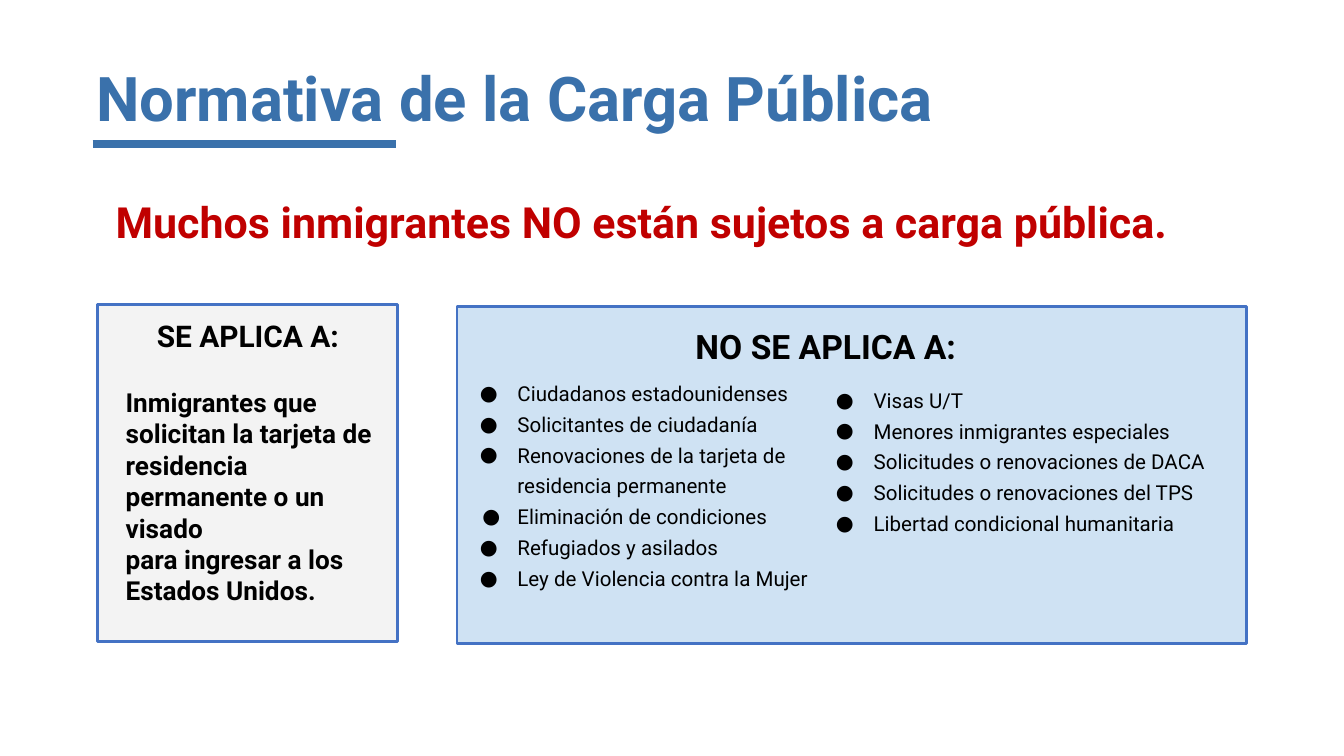
from lxml.etree import SubElement
from pptx import Presentation
from pptx.dml.color import RGBColor
from pptx.enum.shapes import MSO_CONNECTOR as Connector, MSO_SHAPE as Shape
from pptx.enum.text import MSO_ANCHOR as Anchor, PP_ALIGN as Align
from pptx.oxml.ns import qn
from pptx.util import Inches, Pt

WIDTH = Inches(10)
HEIGHT = WIDTH * 9 // 16
COLUMN, ROW = WIDTH / 100, HEIGHT / 56.25
FONT = "Roboto"

BLUE = RGBColor(0x3A, 0x71, 0xAB)
BORDER = RGBColor(0x44, 0x72, 0xC4)
RED = RGBColor(0xC0, 0x00, 0x00)
GRAY = RGBColor(0xF3, 0xF3, 0xF3)
PALE_BLUE = RGBColor(0xCF, 0xE2, 0xF3)
BLACK = RGBColor(0x00, 0x00, 0x00)

APPLIES = [
    "Inmigrantes que solicitan la tarjeta de residencia permanente o un visado",
    "para ingresar a los Estados Unidos.",
]
EXEMPT_LEFT = [
    "Ciudadanos estadounidenses",
    "Solicitantes de ciudadanía",
    "Renovaciones de la tarjeta de residencia permanente",
    "Eliminación de condiciones",
    "Refugiados y asilados",
    "Ley de Violencia contra la Mujer",
]
EXEMPT_RIGHT = [
    "Visas U/T",
    "Menores inmigrantes especiales",
    "Solicitudes o renovaciones de DACA",
    "Solicitudes o renovaciones del TPS",
    "Libertad condicional humanitaria",
]


def cells(left, top, width, height):
    """Turn columns and rows of the slide grid into slide lengths."""
    return (round(left * COLUMN), round(top * ROW),
            round(width * COLUMN), round(height * ROW))


def add_rule(page, left, right, top):
    """Draw the thick line under the title."""
    x, y, width, _ = cells(left, top, right - left, 0)
    rule = page.shapes.add_connector(Connector.STRAIGHT, x, y, x + width, y)
    rule.line.color.rgb = BLUE
    rule.line.width = Pt(4.5)
    SubElement(rule._element.spPr, qn("a:effectLst"))


def add_panel(page, area, fill):
    """Draw a bordered background panel."""
    panel = page.shapes.add_shape(Shape.RECTANGLE, *cells(*area))
    panel.shadow.inherit = False
    panel.fill.solid()
    panel.fill.fore_color.rgb = fill
    panel.line.color.rgb = BORDER
    panel.line.width = Pt(1.5)


def add_text(page, area, lines, size, color=BLACK, bold=True, align=Align.LEFT):
    """Add a wrapped text box with one paragraph per line and return its frame."""
    frame = page.shapes.add_textbox(*cells(*area)).text_frame
    frame.word_wrap = True
    frame.margin_left = frame.margin_right = Inches(0.07)
    frame.margin_top = frame.margin_bottom = Inches(0.07)
    frame.text = "\n".join(lines)
    for para in frame.paragraphs:
        para.alignment = align
        for span in para.runs:
            span.font.name = FONT
            span.font.size = Pt(size)
            span.font.bold = bold
            span.font.color.rgb = color
    return frame


def add_title(page, area, title):
    """Add the slide title, centred vertically in its box."""
    frame = add_text(page, area, [title], 33, BLUE)
    frame.vertical_anchor = Anchor.MIDDLE
    frame.margin_top = frame.margin_bottom = Inches(0.04)
    frame.paragraphs[0].line_spacing = 0.9


def add_bullets(page, area, items):
    """Add a list with round bullets and a hanging indent."""
    for para in add_text(page, area, items, 11, bold=False).paragraphs:
        para.line_spacing = 1.25
        properties = para._p.get_or_add_pPr()
        hanging = 0.26 if para.text == "Eliminación de condiciones" else 0.28
        properties.set("marL", str(Inches(0.38)))
        properties.set("indent", str(-Inches(hanging)))
        color = SubElement(properties, qn("a:buClr"))
        SubElement(color, qn("a:srgbClr"), val=str(BLACK))
        SubElement(properties, qn("a:buFont"), typeface=FONT)
        SubElement(properties, qn("a:buChar"), char="●")


def main():
    """Build the slide and save the deck."""
    deck = Presentation()
    deck.slide_width, deck.slide_height = WIDTH, HEIGHT
    page = deck.slides.add_slide(deck.slide_layouts[6])

    add_rule(page, 6.9, 29.5, 10.7)
    add_title(page, (6.45, 4.75, 78.4, 5.6), "Normativa de la Carga Pública")
    add_text(page, (6.1, 13.85, 83.4, 5.4),
             ["Muchos inmigrantes NO están sujetos a carga pública."],
             23, RED, align=Align.CENTER)

    add_panel(page, (7.25, 22.65, 22.35, 25.1), GRAY)
    add_panel(page, (34, 22.8, 58.75, 25.1), PALE_BLUE)

    add_text(page, (8.65, 28.05, 21, 18.3), APPLIES, 14)
    add_text(page, (10.25, 22.95, 16.4, 4.7), ["SE APLICA A:"], 16,
             align=Align.CENTER)
    add_text(page, (46.6, 23.55, 29.7, 4.7), ["NO SE APLICA A:"], 18,
             align=Align.CENTER)
    add_bullets(page, (34, 27.2, 28, 16.4), EXEMPT_LEFT)
    add_bullets(page, (60.5, 27.7, 30.9, 16.4), EXEMPT_RIGHT)

    deck.save("out.pptx")


if __name__ == "__main__":
    main()
